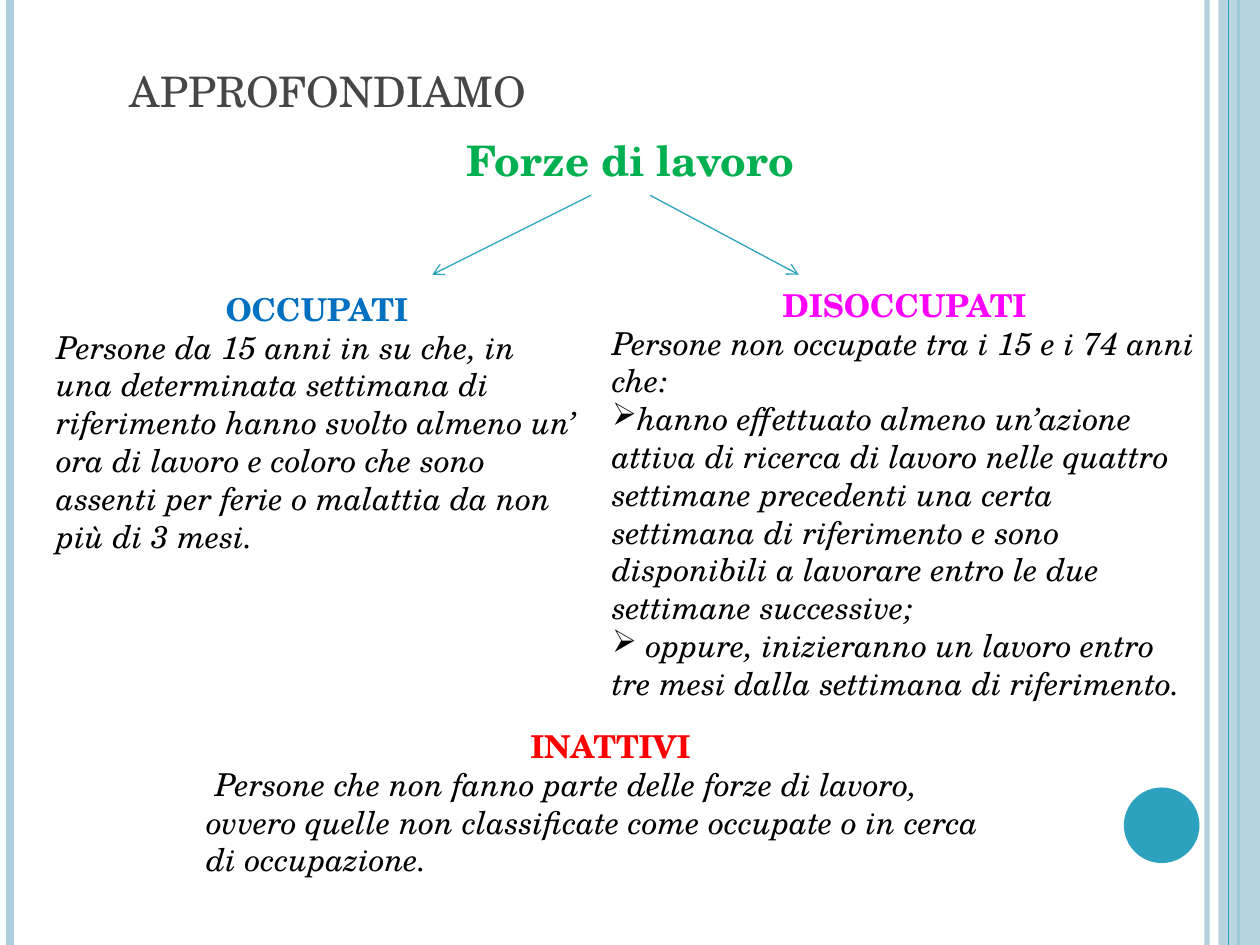
from lxml import etree
from pptx import Presentation
from pptx.dml.color import RGBColor
from pptx.enum import shapes, text
from pptx.oxml.ns import qn
from pptx.util import Inches, Pt

COLORS = {
    "pale": "ADCEDC", "teal": "2DA2BF", "title": "464646", "body": "000000",
    "green": "00B050", "blue": "0070C0", "magenta": "FF00FF", "red": "FF0000",
}
FONT = "TeX Gyre Schola"


def rgb(name):
    return RGBColor.from_string(COLORS[name])


def add_span(para, words, size=18, color="body", bold=False, italic=False, small_caps=False):
    span = para.add_run()
    span.text = words
    font = span.font
    font.name, font.size = FONT, Pt(size)
    font.bold, font.italic = bold, italic
    font.color.rgb = rgb(color)
    if small_caps:
        font._element.set("cap", "small")
    return span


def set_alpha(fill_parent, percent):
    color = next(fill_parent.iter(qn("a:srgbClr")))
    etree.SubElement(color, qn("a:alpha")).set("val", str(percent * 1000))


def set_bullet(para, char=None, margin=0, indent=0):
    props = para._p.get_or_add_pPr()
    props.set("marL", str(Inches(margin)))
    props.set("indent", str(Inches(indent)))
    if char:
        etree.SubElement(props, qn("a:buChar")).set("char", char)
    else:
        etree.SubElement(props, qn("a:buNone"))


class SlideBuilder:
    def __init__(self, page):
        self.page = page

    def line(self, start, end, color="teal", width=0.75, alpha=None, arrow=False):
        ends = [Inches(value) for value in (*start, *end)]
        line = self.page.shapes.add_connector(shapes.MSO_CONNECTOR.STRAIGHT, *ends)
        line.line.color.rgb = rgb(color)
        line.line.width = Pt(width)
        outline = line.line._get_or_add_ln()
        if alpha:
            set_alpha(outline, alpha)
        if arrow:
            etree.SubElement(outline, qn("a:tailEnd")).set("type", "arrow")
        etree.SubElement(line._element.spPr, qn("a:effectLst"))

    def shape(self, kind, area, color, alpha=None):
        shape = self.page.shapes.add_shape(kind, *map(Inches, area))
        shape.shadow.inherit = False
        shape.fill.solid()
        shape.fill.fore_color.rgb = rgb(color)
        shape.line.fill.background()
        if alpha:
            set_alpha(shape._element.spPr, alpha)

    def placeholder(self, index, area, anchor):
        box = self.page.placeholders[index]
        box.left, box.top, box.width, box.height = map(Inches, area)
        frame = box.text_frame
        frame.auto_size = text.MSO_AUTO_SIZE.NONE
        frame.vertical_anchor = anchor
        return frame.paragraphs[0]

    def definition(self, area, heading, color, paragraphs):
        """Centred heading above italic text; each paragraph is (bullet, words)."""
        box = self.page.shapes.add_textbox(*map(Inches, area))
        frame = box.text_frame
        frame.word_wrap = True
        frame.auto_size = text.MSO_AUTO_SIZE.SHAPE_TO_FIT_TEXT
        para = frame.paragraphs[0]
        para.alignment = text.PP_ALIGN.CENTER
        add_span(para, heading, color=color, bold=True)
        for bullet, words in paragraphs:
            para = frame.add_paragraph()
            if bullet:
                set_bullet(para, bullet)
            add_span(para, words, italic=True)


def main():
    deck = Presentation()
    deck.slide_width, deck.slide_height = Inches(10), Inches(7.5)
    page = deck.slides.add_slide(deck.slide_layouts[1])
    builder = SlideBuilder(page)

    # Side bands and disc
    for x, color, width, alpha in [(9.58, "pale", 3, 93), (0.08, "pale", 4.5, None),
                                   (9.83, "teal", 1.5, None)]:
        builder.line((x, 0), (x, 7.5), color, width, alpha)
    builder.shape(shapes.MSO_SHAPE.RECTANGLE, (9.67, 0, 0.33, 7.5), "pale", alpha=87)
    builder.line((9.75, 0), (9.75, 7.5))
    builder.shape(shapes.MSO_SHAPE.OVAL, (8.92, 6.25, 0.6, 0.6), "teal")

    # Title and main term
    title = builder.placeholder(0, (0.93, 0.2, 8.17, 0.79), text.MSO_ANCHOR.BOTTOM)
    title.alignment = text.PP_ALIGN.LEFT
    add_span(title, "approfondiamo", size=30, color="title", small_caps=True)

    term = builder.placeholder(1, (0.5, 1.02, 8.91, 5.96), text.MSO_ANCHOR.TOP)
    term.alignment = text.PP_ALIGN.CENTER
    term.space_before = Pt(6)
    set_bullet(term, margin=0.3, indent=-0.3)
    add_span(term, " ", size=24)
    add_span(term, "Forze di lavoro", size=24, color="green", bold=True)

    # Arrows to the two groups
    for start_x, end_x in [(4.69, 3.43), (5.16, 6.34)]:
        builder.line((start_x, 1.55), (end_x, 2.18), arrow=True)

    # Definitions
    builder.definition((0.35, 2.25, 4.33, 2.22), "OCCUPATI", "blue", [
        (None, "Persone da 15 anni in su che, in una determinata settimana di "
               "riferimento hanno svolto almeno un’ ora di lavoro e coloro che sono "
               "assenti per ferie o malattia da non più di 3 mesi."),
    ])
    builder.definition((4.76, 2.22, 4.84, 3.74), "DISOCCUPATI", "magenta", [
        (None, "Persone non occupate tra i 15 e i 74 anni che:"),
        ("➢", "hanno effettuato almeno un’azione attiva di ricerca di lavoro nelle "
              "quattro settimane precedenti una certa settimana di riferimento e sono "
              "disponibili a lavorare entro le due settimane successive;"),
        ("➢", " oppure, inizieranno un lavoro entro tre mesi dalla settimana di "
              "riferimento."),
    ])
    builder.definition((1.54, 5.72, 6.61, 1.31), "INATTIVI", "red", [
        (None, " Persone che non fanno parte delle forze di lavoro, ovvero quelle non "
               "classificate come occupate o in cerca di occupazione."),
    ])

    deck.save("out.pptx")


if __name__ == "__main__":
    main()
